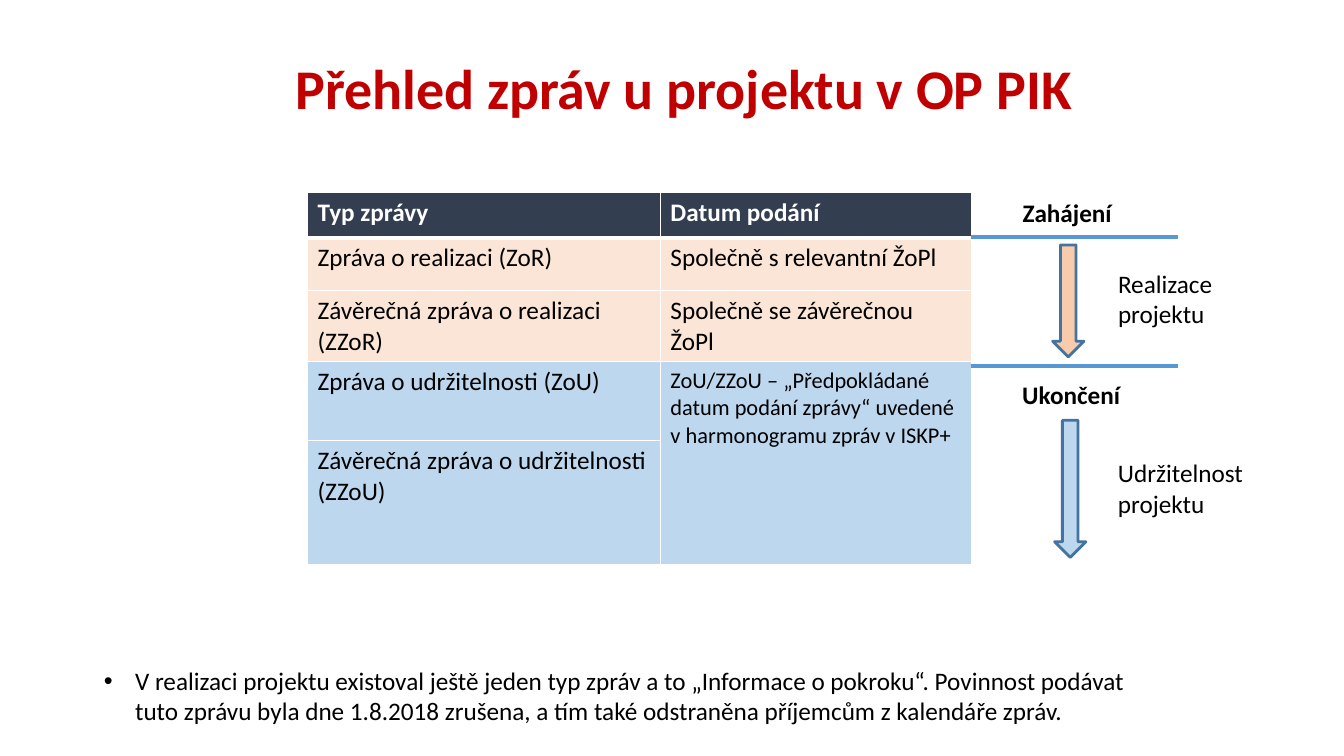
import lxml.etree
import pptx
import pptx.dml.color
import pptx.enum.shapes
import pptx.enum.text
import pptx.oxml.ns
import pptx.util
from dataclasses import dataclass

Inches = pptx.util.Inches
Pt = pptx.util.Pt
ALIGN = pptx.enum.text.PP_ALIGN
ANCHOR = pptx.enum.text.MSO_ANCHOR
SHAPE = pptx.enum.shapes.MSO_SHAPE


@dataclass(frozen=True)
class Theme:
    font: str = "Calibri"
    title_size: int = 40
    text_size: int = 18
    small_size: int = 16
    title: str = "C00000"
    text: str = "000000"
    white: str = "FFFFFF"
    header: str = "333F50"
    realization: str = "FBE5D6"
    realization_arrow: str = "F8CBAD"
    sustainability: str = "BDD7EE"
    arrow_outline: str = "43739E"
    milestone: str = "5698D3"


def rgb(color):
    return pptx.dml.color.RGBColor.from_string(color)


def add_child(parent, tag, **attributes):
    child = lxml.etree.SubElement(parent, pptx.oxml.ns.qn(tag))
    for name, value in attributes.items():
        child.set(name, str(value))
    return child


class SlideBuilder:
    def __init__(self, slide, theme):
        self.slide = slide
        self.theme = theme

    def place(self, element, box):
        element.left, element.top, element.width, element.height = map(Inches, box)

    def add_text(self, frame, text, size=None, color=None, bold=False, align=ALIGN.LEFT):
        paragraph = frame.paragraphs[0]
        paragraph.alignment = align
        run = paragraph.add_run()
        run.text = text
        run.font.name = self.theme.font
        run.font.size = Pt(size or self.theme.text_size)
        run.font.bold = bold
        run.font.color.rgb = rgb(color or self.theme.text)
        return paragraph

    def title(self, text, box):
        heading = self.slide.shapes.title
        self.place(heading, box)
        heading.text_frame.vertical_anchor = ANCHOR.MIDDLE
        self.add_text(heading.text_frame, text, self.theme.title_size,
                      self.theme.title, True, ALIGN.CENTER)

    def bullet(self, text, box, indent):
        body = self.slide.placeholders[1]
        self.place(body, box)
        body.text_frame.auto_size = pptx.enum.text.MSO_AUTO_SIZE.NONE
        paragraph = self.add_text(body.text_frame, text)
        properties = paragraph._p.get_or_add_pPr()
        properties.set("marL", str(Inches(indent)))
        properties.set("indent", str(-Inches(indent)))
        add_child(properties, "a:buFont", typeface="Arial")
        add_child(properties, "a:buChar", char="•")
        paragraph.space_before = Pt(0)

    def label(self, text, box, bold=False, align=ALIGN.LEFT, wrap=True):
        note = self.slide.shapes.add_textbox(*map(Inches, box))
        note.text_frame.word_wrap = wrap
        self.add_text(note.text_frame, text, bold=bold, align=align)

    def down_arrow(self, box, color):
        arrow = self.slide.shapes.add_shape(SHAPE.DOWN_ARROW, *map(Inches, box))
        arrow.shadow.inherit = False
        arrow.fill.solid()
        arrow.fill.fore_color.rgb = rgb(color)
        arrow.line.color.rgb = rgb(self.theme.arrow_outline)
        arrow.line.width = Pt(2)

    def milestone(self, left, right, y):
        rule = self.slide.shapes.add_connector(
            pptx.enum.shapes.MSO_CONNECTOR.STRAIGHT, *map(Inches, (left, y, right, y)))
        rule.line.color.rgb = rgb(self.theme.milestone)
        rule.line.width = Pt(3)
        add_child(rule._element.spPr, "a:effectLst")

    def borders(self, cell, top, bottom):
        properties = cell._tc.get_or_add_tcPr()
        for side, width in (("L", 1), ("R", 1), ("T", top), ("B", bottom)):
            line = add_child(properties, f"a:ln{side}", w=Pt(width))
            fill = add_child(line, "a:solidFill")
            add_child(fill, "a:srgbClr", val=self.theme.white)

    def table(self, rows, box, widths, heights, fills):
        table = self.slide.shapes.add_table(len(rows), len(widths), *map(Inches, box)).table
        for column, width in zip(table.columns, widths):
            column.width = Inches(width)
        for index, (row, height) in enumerate(zip(table.rows, heights)):
            row.height = Inches(height)
            for cell, entry in zip(row.cells, rows[index]):
                self.borders(cell, 3 if index == 1 else 1, 3 if index == 0 else 1)
                cell.fill.solid()
                cell.fill.fore_color.rgb = rgb(fills[index])
                if entry:
                    text, size = entry
                    color = self.theme.white if index == 0 else self.theme.text
                    self.add_text(cell.text_frame, text, size, color, index == 0)
        return table


def main():
    theme = Theme()
    deck = pptx.Presentation()
    deck.slide_width, deck.slide_height = Inches(13.33), Inches(7.5)
    page = SlideBuilder(deck.slides.add_slide(deck.slide_layouts[1]), theme)

    page.title("Přehled zpráv u projektu v OP PIK", (0.78, 0.24, 12, 1.25))

    normal, small = theme.text_size, theme.small_size
    reports = [
        [("Typ zprávy", normal), ("Datum podání", normal)],
        [("Zpráva o realizaci (ZoR)", normal), ("Společně s relevantní ŽoPl", normal)],
        [("Závěrečná zpráva o realizaci (ZZoR)", normal),
         ("Společně se závěrečnou ŽoPl", normal)],
        [("Zpráva o udržitelnosti (ZoU)", normal),
         ("ZoU/ZZoU – „Předpokládané datum podání zprávy“ uvedené "
          "v harmonogramu zpráv v ISKP+", small)],
        [("Závěrečná zpráva o udržitelnosti (ZZoU)", normal), None],
    ]
    fills = [theme.header] + [theme.realization] * 2 + [theme.sustainability] * 2
    table = page.table(reports, (3.05, 1.91, 6.59, 3.69), (3.5, 3.09),
                       (0.45, 0.52, 0.71, 0.78, 1.23), fills)
    table.cell(3, 1).merge(table.cell(4, 1))

    page.label("Zahájení", (10.01, 1.91, 1.15, 0.4), True, ALIGN.CENTER, wrap=False)
    page.down_arrow((10.44, 2.43, 0.31, 1.11), theme.realization_arrow)
    page.label("Ukončení", (10.04, 3.71, 1.4, 0.4), True)
    page.down_arrow((10.46, 4.17, 0.31, 1.36), theme.sustainability)
    for y in (3.63, 2.35):
        page.milestone(9.63, 11.68, y)
    page.label("Realizace projektu", (10.99, 2.61, 1.35, 0.71))
    page.label("Udržitelnost projektu", (10.99, 4.49, 1.7, 0.71))

    page.bullet("V realizaci projektu existoval ještě jeden typ zpráv a to "
                "„Informace o pokroku“. Povinnost podávat tuto zprávu byla dne "
                "1.8.2018 zrušena, a tím také odstraněna příjemcům z kalendáře zpráv.",
                (0.93, 6.55, 10.51, 0.71), 0.31)
    deck.save("out.pptx")


if __name__ == "__main__":
    main()
